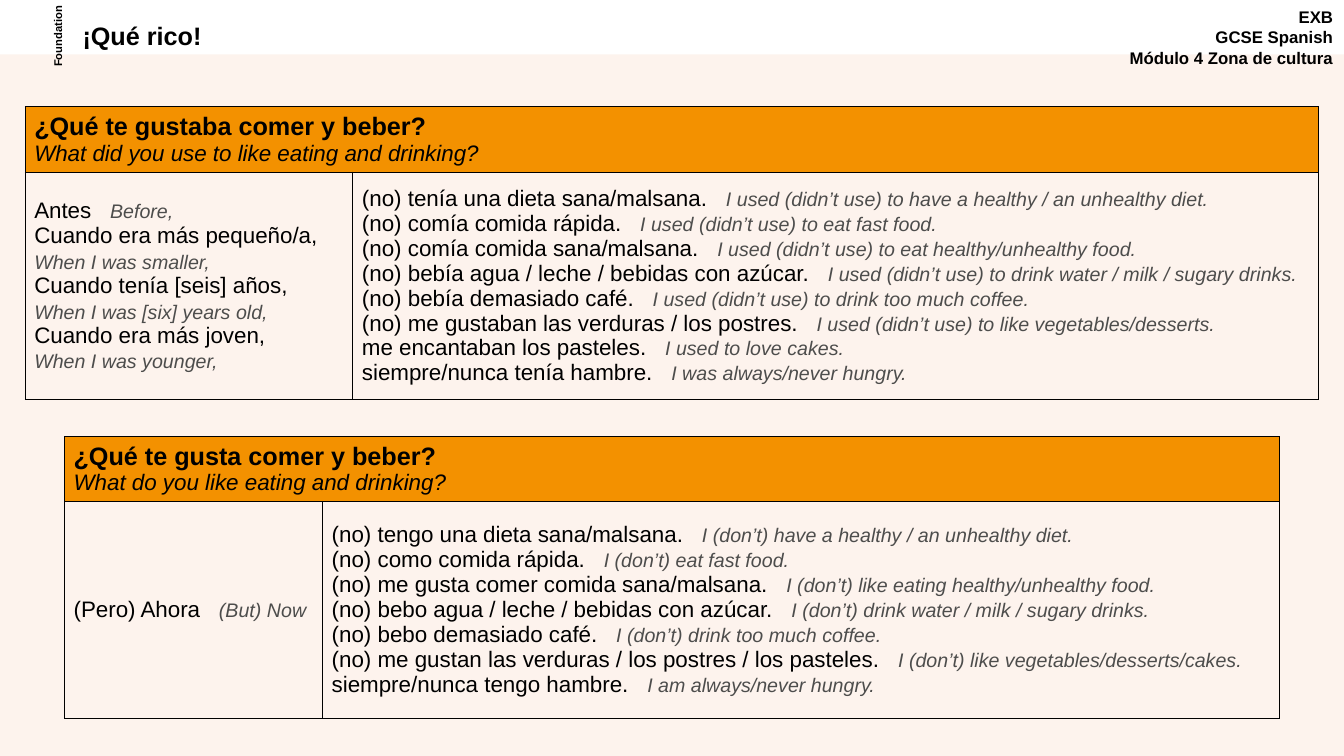
from lxml import etree
from pptx import Presentation
from pptx.dml.color import RGBColor
from pptx.enum.shapes import MSO_SHAPE
from pptx.enum.text import MSO_ANCHOR, PP_ALIGN
from pptx.oxml.ns import qn
from pptx.util import Inches, Pt

RECT = MSO_SHAPE.RECTANGLE
MIDDLE = MSO_ANCHOR.MIDDLE
LEFT, CENTER, RIGHT = PP_ALIGN.LEFT, PP_ALIGN.CENTER, PP_ALIGN.RIGHT
W, H = 13.33, 7.5
HEADER_H = 0.62
BLACK, GREY, ORANGE, CREAM = "000000", "4D4D4C", "F39100", "FDF3ED"

PAST_OPENERS = [
    ("Antes", "Before,"),
    ("Cuando era más pequeño/a,", ""),
    ("", "When I was smaller,"),
    ("Cuando tenía [seis] años,", ""),
    ("", "When I was [six] years old,"),
    ("Cuando era más joven,", ""),
    ("", "When I was younger,"),
]
PAST_PHRASES = [
    ("(no) tenía una dieta sana/malsana.", "I used (didn’t use) to have a healthy / an unhealthy diet."),
    ("(no) comía comida rápida.", "I used (didn’t use) to eat fast food."),
    ("(no) comía comida sana/malsana.", "I used (didn’t use) to eat healthy/unhealthy food."),
    ("(no) bebía agua / leche / bebidas con azúcar.",
     "I used (didn’t use) to drink water / milk / sugary drinks."),
    ("(no) bebía demasiado café.", "I used (didn’t use) to drink too much coffee."),
    ("(no) me gustaban las verduras / los postres.", "I used (didn’t use) to like vegetables/desserts."),
    ("me encantaban los pasteles.", "I used to love cakes."),
    ("siempre/nunca tenía hambre.", "I was always/never hungry."),
]
NOW_OPENERS = [("(Pero) Ahora", "(But) Now")]
NOW_PHRASES = [
    ("(no) tengo una dieta sana/malsana.", "I (don’t) have a healthy / an unhealthy diet."),
    ("(no) como comida rápida.", "I (don’t) eat fast food."),
    ("(no) me gusta comer comida sana/malsana.", "I (don’t) like eating healthy/unhealthy food."),
    ("(no) bebo agua / leche / bebidas con azúcar.", "I (don’t) drink water / milk / sugary drinks."),
    ("(no) bebo demasiado café.", "I (don’t) drink too much coffee."),
    ("(no) me gustan las verduras / los postres / los pasteles.",
     "I (don’t) like vegetables/desserts/cakes."),
    ("siempre/nunca tengo hambre.", "I am always/never hungry."),
]


def rgb(value):
    """Turn a hex string into a colour."""
    return RGBColor.from_string(value)


def style(font, size, color=BLACK, bold=False, italic=False):
    """Set the look of a font."""
    font.name, font.size = "Arial", Pt(size)
    font.bold, font.italic = bold, italic
    font.color.rgb = rgb(color)


def add_label(s, box, lines, size, align=LEFT, spacing=None):
    """Add a bold text box and return it."""
    sp = s.shapes.add_textbox(*map(Inches, box))
    tf = sp.text_frame
    tf.word_wrap = True
    tf.text = "\n".join(lines)
    for p in tf.paragraphs:
        p.alignment = align
        p.line_spacing = spacing
        for r in p.runs:
            style(r.font, size, bold=True)
    return sp


def add_banner(s, box, title, tier, course):
    """Add the title strip: tier on its side, title and course."""
    x, y, w, h = box
    add_label(s, (x + w - 3, y + 0.02, 2.99, 0.77), course, 12, RIGHT)
    add_label(s, (x + 0.72, y + 0.19, w / 2, 0.43), [title], 18, spacing=0.9)
    sp = add_label(s, (x + 0.15, y + 0.23, 0.87, 0.26), [tier], 8, CENTER)
    sp.rotation = 270


def add_borders(cell):
    """Draw a thin black line on every side of a cell."""
    tcPr = cell._tc.get_or_add_tcPr()
    for i, side in enumerate(("a:lnL", "a:lnR", "a:lnT", "a:lnB")):
        ln = etree.Element(qn(side), w=str(Pt(0.75)))
        fill = etree.SubElement(ln, qn("a:solidFill"))
        etree.SubElement(fill, qn("a:srgbClr"), val=BLACK)
        tcPr.insert(i, ln)


def fill_phrases(cell, phrases):
    """Write each phrase with its translation on one line."""
    tf = cell.text_frame
    for i, (spanish, english) in enumerate(phrases):
        p = tf.add_paragraph() if i else tf.paragraphs[0]
        p.line_spacing = Pt(17.8)
        gap = " " if spanish and english else ""
        looks = ((spanish, 16, BLACK, False), (gap, 16, BLACK, False), (english, 14, GREY, True))
        for text, size, color, italic in looks:
            if text:
                r = p.add_run()
                r.text = text
                style(r.font, size, color, italic=italic)
                if text == gap:
                    r.font._element.set("spc", "890")


def add_phrase_table(s, box, first_col, question, translation, openers, phrases):
    """Add a table with a question header over openers and phrases."""
    x, y, w, h = box
    table = s.shapes.add_table(2, 2, *map(Inches, box)).table
    table.first_row = table.horz_banding = False
    for column, width in zip(table.columns, (first_col, w - first_col)):
        column.width = Inches(width)
    for row, height in zip(table.rows, (HEADER_H, h - HEADER_H)):
        row.height = Inches(height)
    header = table.cell(0, 0)
    header.merge(table.cell(0, 1))
    for cell in table.iter_cells():
        cell.vertical_anchor = MIDDLE
        cell.margin_left = cell.margin_right = Inches(0.09)
        cell.margin_top = cell.margin_bottom = Inches(0.04)
        cell.fill.background()
        add_borders(cell)
    header.fill.solid()
    header.fill.fore_color.rgb = rgb(ORANGE)
    header.text_frame.text = f"{question}\n{translation}"
    top, bottom = header.text_frame.paragraphs
    style(top.runs[0].font, 18, bold=True)
    style(bottom.runs[0].font, 16, italic=True)
    fill_phrases(table.cell(1, 0), openers)
    fill_phrases(table.cell(1, 1), phrases)


def add_panel(s, box):
    """Add the plain background panel."""
    sp = s.shapes.add_shape(RECT, *map(Inches, box))
    sp.shadow.inherit = False
    sp.fill.solid()
    sp.fill.fore_color.rgb = rgb(CREAM)
    sp.line.fill.background()


def main():
    """Build and save the slide."""
    prs = Presentation()
    prs.slide_width, prs.slide_height = Inches(W), Inches(H)
    s = prs.slides.add_slide(prs.slide_layouts[6])
    add_panel(s, (0, 0.54, W, H - 0.54))
    add_banner(s, (0, 0, W, 0.54), "¡Qué rico!", "Foundation",
               ["EXB", "GCSE Spanish", "Módulo 4 Zona de cultura"])
    add_phrase_table(s, (0.25, 1.06, W - 2 * 0.25, 2.88), 3.25, "¿Qué te gustaba comer y beber?",
                     "What did you use to like eating and drinking?", PAST_OPENERS, PAST_PHRASES)
    add_phrase_table(s, (0.64, 4.33, W - 2 * 0.64, 2.77), 2.56, "¿Qué te gusta comer y beber?",
                     "What do you like eating and drinking?", NOW_OPENERS, NOW_PHRASES)
    prs.save("out.pptx")


if __name__ == "__main__":
    main()
